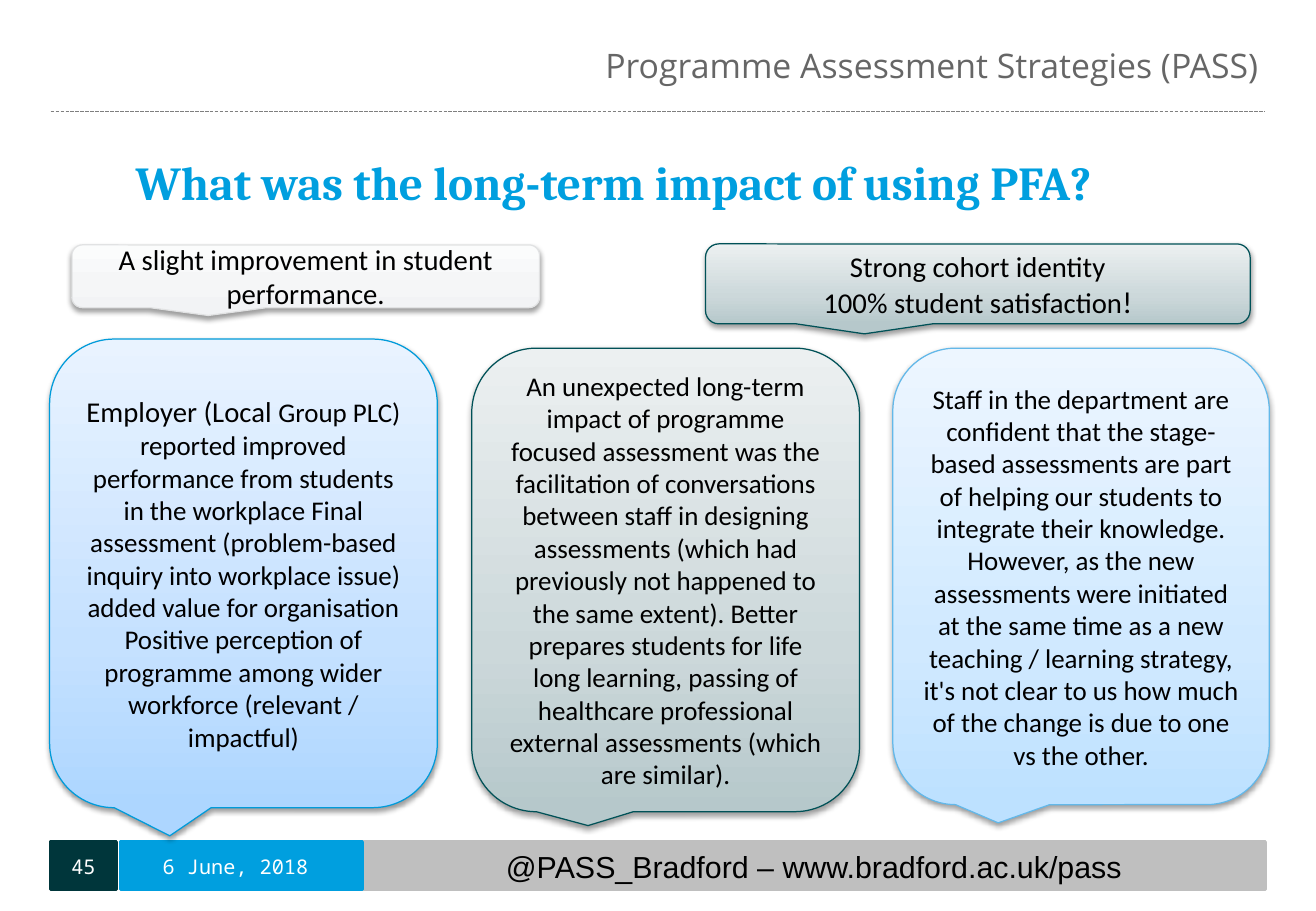
from copy import deepcopy
from dataclasses import dataclass
from typing import Any, NamedTuple, Optional

from lxml import etree
from pptx import Presentation, util as u
from pptx.dml.color import RGBColor
from pptx.enum import dml, shapes, text
from pptx.oxml import ns

COLUMNS, ROWS = 130, 90
CELL = u.Inches(1) / 12

BLACK = RGBColor(0x00, 0x00, 0x00)
WHITE = RGBColor(0xFF, 0xFF, 0xFF)
SKY = RGBColor(0x00, 0x9F, 0xDF)
PINE = RGBColor(0x00, 0x36, 0x3B)
SILVER = RGBColor(0xBF, 0xBF, 0xBF)
HEADER_GREY = RGBColor(0x66, 0x66, 0x66)
RULE_GREY = RGBColor(0x7F, 0x7F, 0x7F)


class Area(NamedTuple):
    """Left, top, width and height in grid columns and rows."""
    left: float
    top: float
    width: float
    height: float

    def lengths(self) -> list[u.Emu]:
        return [cells(value) for value in self]


class Span(NamedTuple):
    words: str
    size: float
    font: str = "Calibri"
    color: RGBColor = BLACK
    bold: bool = False


class Tint(NamedTuple):
    """Gradient colours from bottom to top, and the outline."""
    stops: tuple[str, str, str]
    line: str


@dataclass
class Bar:
    left: float
    width: float
    color: RGBColor
    label: Span
    right_inset: float = 0


@dataclass
class Callout:
    area: Area
    tint: Tint
    lines: list[list[Span]]
    tail: Optional[tuple[float, float]] = None


PALE = Tint(("F2F3F5", "F5F6F7", "FBFCFC"), "E1E2E3")
TEAL = Tint(("B6C8CB", "CCD8DA", "ECF0F1"), "005157")
BLUE = Tint(("ADD6FF", "C5E1FF", "E9F3FF"), "009BDA")
LIGHT_BLUE = Tint(("BDE1FF", "D0E9FF", "EDF6FF"), "63B8E9")
STOP_POSITIONS = (0, 0.35, 1)

MONO = "Noto Sans Mono"
BAR_TOP, BAR_HEIGHT = 83.2, 4.7
BARS = [
    Bar(5, 6.5, PINE, Span("45", 12, MONO, WHITE)),
    Bar(35.8, 89.2, SILVER,
        Span("@PASS_Bradford – www.bradford.ac.uk/pass", 18, "Arial")),
    Bar(11.9, 23.9, SKY, Span("6 June, 2018", 12, MONO, WHITE), 1.2),
]

CALLOUTS = [
    Callout(Area(7.1, 24.2, 46.2, 6.2), PALE,
            [[Span("A slight improvement in student performance.", 17)]]),
    Callout(Area(88.2, 34.4, 37.2, 45.1), LIGHT_BLUE, [[Span(
        "Staff in the department are confident that the stage-based "
        "assessments are part of helping our students to integrate their "
        "knowledge. However, as the new assessments were initiated at the "
        "same time as a new teaching / learning strategy, it's not clear to "
        "us how much of the change is due to one vs the other.", 16)]],
        (-0.22, 0.54)),
    Callout(Area(69.7, 24.1, 53.8, 7.9), TEAL, [
        [Span("Strong cohort identity", 17)],
        [Span("100% student satisfaction", 17), Span("!", 18)]]),
    Callout(Area(4.9, 33.5, 38.3, 46.3), BLUE, [[
        Span("Employer (Local ", 17),
        Span("Group PLC) reported improved performance from students in the "
             "workplace Final assessment (problem-based inquiry into "
             "workplace issue) added value for organisation Positive "
             "perception of programme among wider workforce (relevant / "
             "impactful)", 16)]],
        (-0.19, 0.56)),
    Callout(Area(46.6, 34.4, 38.3, 45.8), TEAL, [[Span(
        "An unexpected long-term impact of programme focused assessment was "
        "the facilitation of conversations between staff in designing "
        "assessments (which had previously not happened to the same extent). "
        "Better prepares students for life long learning, passing of "
        "healthcare professional external assessments (which are similar).",
        16)]],
        (-0.2, 0.53)),
]


def cells(count: float) -> u.Emu:
    return u.Emu(round(count * CELL))


def set_all(target: Any, values: dict[str, Any]) -> None:
    for name, value in values.items():
        setattr(target, name, value)


def write(box: Any, lines: list[list[Span]], align: text.PP_ALIGN,
          frame_format: dict[str, Any]) -> None:
    """Fill the box with one paragraph, breaking between the lines."""
    frame = box.text_frame
    set_all(frame, {"word_wrap": True,
                    "vertical_anchor": text.MSO_ANCHOR.MIDDLE} | frame_format)
    para = frame.paragraphs[0]
    para.alignment = align
    for index, line in enumerate(lines):
        if index:
            para.add_line_break()
        for span in line:
            run = para.add_run()
            run.text = span.words
            set_all(run.font, {"size": u.Pt(span.size), "name": span.font,
                               "bold": span.bold})
            run.font.color.rgb = span.color


def margins(right: float = 0) -> dict[str, Any]:
    return {"margin_left": 0, "margin_top": 0, "margin_bottom": 0,
            "margin_right": cells(right)}


def draw_bar(page: Any, bar: Bar) -> None:
    area = Area(bar.left, BAR_TOP, bar.width, BAR_HEIGHT)
    box = page.shapes.add_shape(shapes.MSO_SHAPE.RECTANGLE, *area.lengths())
    box.shadow.inherit = False
    box.fill.solid()
    box.fill.fore_color.rgb = bar.color
    box.line.color.rgb = bar.color
    box.line.width = u.Pt(2)
    write(box, [[bar.label]], text.PP_ALIGN.CENTER, margins(bar.right_inset))


def draw_rule(page: Any, left: float, right: float, top: float) -> None:
    rule = page.shapes.add_connector(
        shapes.MSO_CONNECTOR.STRAIGHT,
        cells(left), cells(top), cells(right), cells(top))
    set_all(rule.line, {"width": u.Pt(0.75),
                        "dash_style": dml.MSO_LINE.SQUARE_DOT})
    rule.line.color.rgb = RULE_GREY
    etree.SubElement(rule._element.spPr, ns.qn("a:effectLst"))


def paint_gradient(box: Any, tint: Tint) -> None:
    box.fill.gradient()
    box.fill.gradient_angle = 90
    stop_list = box._element.spPr.find(".//" + ns.qn("a:gsLst"))
    stop_list.append(deepcopy(stop_list[-1]))
    for stop, color, position in zip(box.fill.gradient_stops, tint.stops,
                                     STOP_POSITIONS):
        stop.color.rgb = RGBColor.from_string(color)
        stop.position = position


def cast_shadow(box: Any) -> None:
    box.shadow.inherit = False
    effects = box._element.spPr.find(ns.qn("a:effectLst"))
    shadow = etree.SubElement(effects, ns.qn("a:outerShdw"), {
        "blurRad": "40000", "dist": "20000", "dir": "5400000",
        "rotWithShape": "0"})
    color = etree.SubElement(shadow, ns.qn("a:srgbClr"), val=str(BLACK))
    etree.SubElement(color, ns.qn("a:alpha"), val="38000")


def draw_callout(page: Any, callout: Callout) -> None:
    box = page.shapes.add_shape(shapes.MSO_SHAPE.ROUNDED_RECTANGULAR_CALLOUT,
                                *callout.area.lengths())
    if callout.tail:
        box.adjustments[0], box.adjustments[1] = callout.tail
    paint_gradient(box, callout.tint)
    box.line.color.rgb = RGBColor.from_string(callout.tint.line)
    box.line.width = u.Pt(0.75)
    cast_shadow(box)
    write(box, callout.lines, text.PP_ALIGN.CENTER, {})


def main() -> None:
    deck = Presentation()
    set_all(deck, {"slide_width": cells(COLUMNS), "slide_height": cells(ROWS)})
    page = deck.slides.add_slide(deck.slide_layouts[6])

    header = page.shapes.add_textbox(*Area(42.4, 3.8, 83.1, 5.3).lengths())
    write(header, [[Span("Programme Assessment Strategies (PASS)", 20,
                         "Open Sans", HEADER_GREY)]], text.PP_ALIGN.RIGHT, {})
    draw_rule(page, 5, 125, 11)
    title = page.shapes.add_textbox(*Area(13.4, 11.9, 111.4, 12.1).lengths())
    write(title, [[Span("What was the long-term impact of using PFA?", 28,
                        "Cambria", SKY, True)]],
          text.PP_ALIGN.LEFT, margins())
    for bar in BARS:
        draw_bar(page, bar)
    for callout in CALLOUTS:
        draw_callout(page, callout)
    deck.save("out.pptx")


if __name__ == "__main__":
    main()
